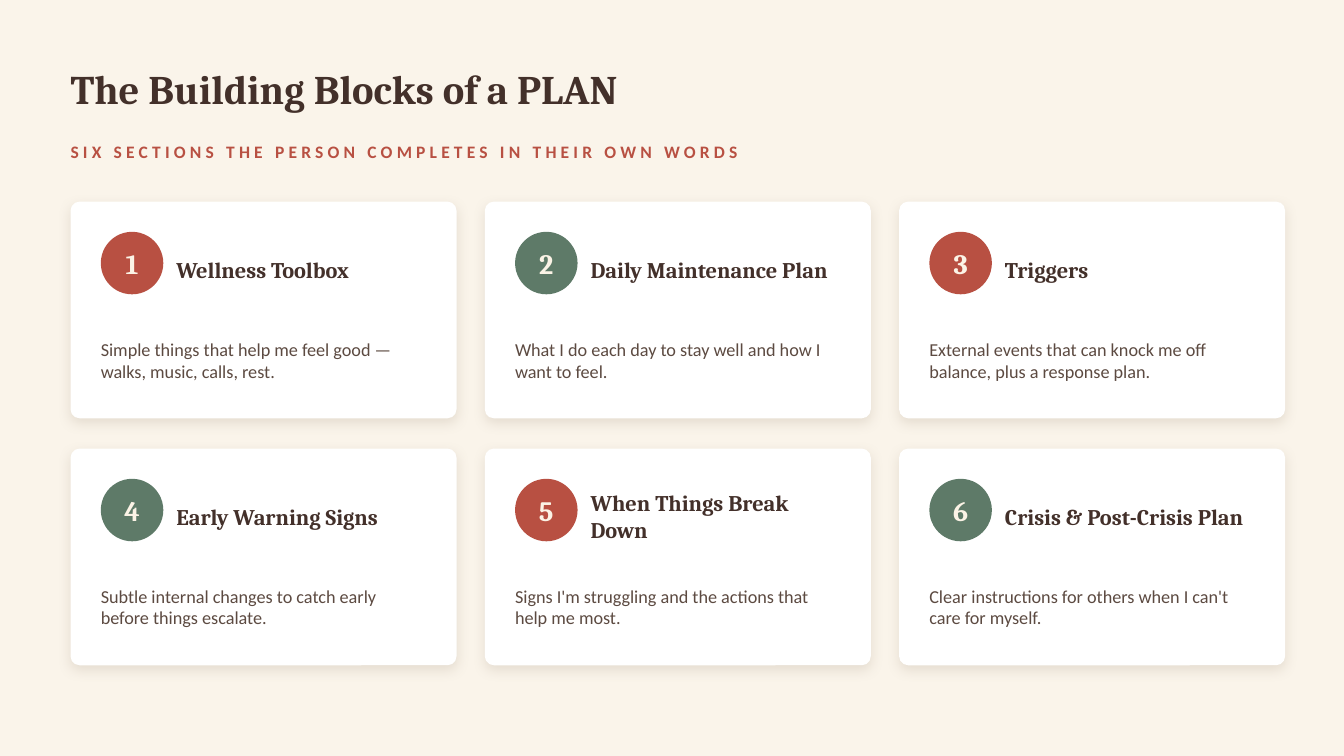
"""Build the slide on the six building blocks of a plan."""
from lxml import etree
from pptx import Presentation
from pptx.dml.color import RGBColor
from pptx.enum.shapes import MSO_SHAPE
from pptx.enum.text import MSO_ANCHOR, PP_ALIGN
from pptx.oxml.ns import qn
from pptx.util import Pt

ROUNDED = MSO_SHAPE.ROUNDED_RECTANGLE
OVAL = MSO_SHAPE.OVAL
MIDDLE = MSO_ANCHOR.MIDDLE
LEFT = PP_ALIGN.LEFT
CENTER = PP_ALIGN.CENTER

CREAM = RGBColor(0xFA, 0xF4, 0xEA)
WHITE = RGBColor(0xFF, 0xFF, 0xFF)
BROWN = RGBColor(0x43, 0x30, 0x2A)
SOFT_BROWN = RGBColor(0x5C, 0x4A, 0x41)
RUST = RGBColor(0xB8, 0x50, 0x42)
SAGE = RGBColor(0x5E, 0x7A, 0x68)
IVORY = RGBColor(0xFB, 0xF3, 0xE6)
SHADE = RGBColor(0x9A, 0x88, 0x73)

HEADING_FONT = "Cambria"
BODY_FONT = "Calibri"

MARGIN = 50.4
GRID_TOP = 144
COLUMNS = 3
COLUMN_STEP = 295.92
ROW_STEP = 176.4
CARD_WIDTH = 275.76
CARD_HEIGHT = 154.8
PADDING = 21.6
BADGE_SIZE = 44.64

SECTIONS = [
    ("Wellness Toolbox",
     "Simple things that help me feel good — walks, music, calls, rest."),
    ("Daily Maintenance Plan",
     "What I do each day to stay well and how I want to feel."),
    ("Triggers",
     "External events that can knock me off balance, plus a response plan."),
    ("Early Warning Signs",
     "Subtle internal changes to catch early before things escalate."),
    ("When Things Break Down",
     "Signs I'm struggling and the actions that help me most."),
    ("Crisis & Post-Crisis Plan",
     "Clear instructions for others when I can't care for myself."),
]


def write(frame, text, *, size, color, font=BODY_FONT, bold=False,
          align=LEFT, spacing=0):
    frame.word_wrap = True
    frame.vertical_anchor = MIDDLE
    frame.margin_left = frame.margin_right = 0
    frame.margin_top = frame.margin_bottom = 0
    paragraph = frame.paragraphs[0]
    paragraph.alignment = align
    run = paragraph.add_run()
    run.text = text
    run.font.name = font
    run.font.size = Pt(size)
    run.font.bold = bold
    run.font.color.rgb = color
    if spacing:
        run.font._element.set("spc", str(spacing * 100))


class SectionSlide:
    def __init__(self, slide):
        self.slide = slide
        slide.background.fill.solid()
        slide.background.fill.fore_color.rgb = CREAM

    def text(self, left, top, width, height, text, **style):
        box = self.slide.shapes.add_textbox(
            Pt(left), Pt(top), Pt(width), Pt(height))
        write(box.text_frame, text, **style)

    def shape(self, kind, left, top, width, height, fill):
        shape = self.slide.shapes.add_shape(
            kind, Pt(left), Pt(top), Pt(width), Pt(height))
        shape.fill.solid()
        shape.fill.fore_color.rgb = fill
        shape.line.fill.background()
        shape.shadow.inherit = False
        return shape

    def card(self, left, top):
        card = self.shape(ROUNDED, left, top, CARD_WIDTH, CARD_HEIGHT, WHITE)
        card.adjustments[0] = 0.042
        effects = card._element.spPr.find(qn("a:effectLst"))
        shadow = etree.SubElement(
            effects, qn("a:outerShdw"), blurRad=str(Pt(9)), dist=str(Pt(3)),
            dir="5400000", algn="t", rotWithShape="0")
        tint = etree.SubElement(shadow, qn("a:srgbClr"), val=str(SHADE))
        etree.SubElement(tint, qn("a:alpha"), val="22000")

    def badge(self, left, top, number, fill):
        badge = self.shape(OVAL, left, top, BADGE_SIZE, BADGE_SIZE, fill)
        write(badge.text_frame, str(number), size=20, color=IVORY,
              font=HEADING_FONT, bold=True, align=CENTER)

    def section(self, index, heading, description):
        row, column = divmod(index, COLUMNS)
        left = MARGIN + column * COLUMN_STEP
        top = GRID_TOP + row * ROW_STEP
        inner = left + PADDING
        self.card(left, top)
        self.badge(inner, top + PADDING, index + 1, (RUST, SAGE)[index % 2])
        self.text(left + 75.6, top + 23.04, 185.76, 50.4, heading,
                  size=16, color=BROWN, font=HEADING_FONT, bold=True)
        self.text(inner, top + 80.64, CARD_WIDTH - 2 * PADDING, 64.8,
                  description, size=13, color=SOFT_BROWN)


def main():
    deck = Presentation()
    deck.slide_width, deck.slide_height = Pt(960), Pt(540)
    page = SectionSlide(deck.slides.add_slide(deck.slide_layouts[6]))
    page.text(MARGIN, 32.4, 856.8, 61.2, "The Building Blocks of a PLAN",
              size=29, color=BROWN, font=HEADING_FONT, bold=True)
    page.text(MARGIN, 97.2, 856.8, 21.6,
              "SIX SECTIONS THE PERSON COMPLETES IN THEIR OWN WORDS",
              size=12.5, color=RUST, bold=True, spacing=3)
    for index, (heading, description) in enumerate(SECTIONS):
        page.section(index, heading, description)
    deck.save("out.pptx")


if __name__ == "__main__":
    main()
